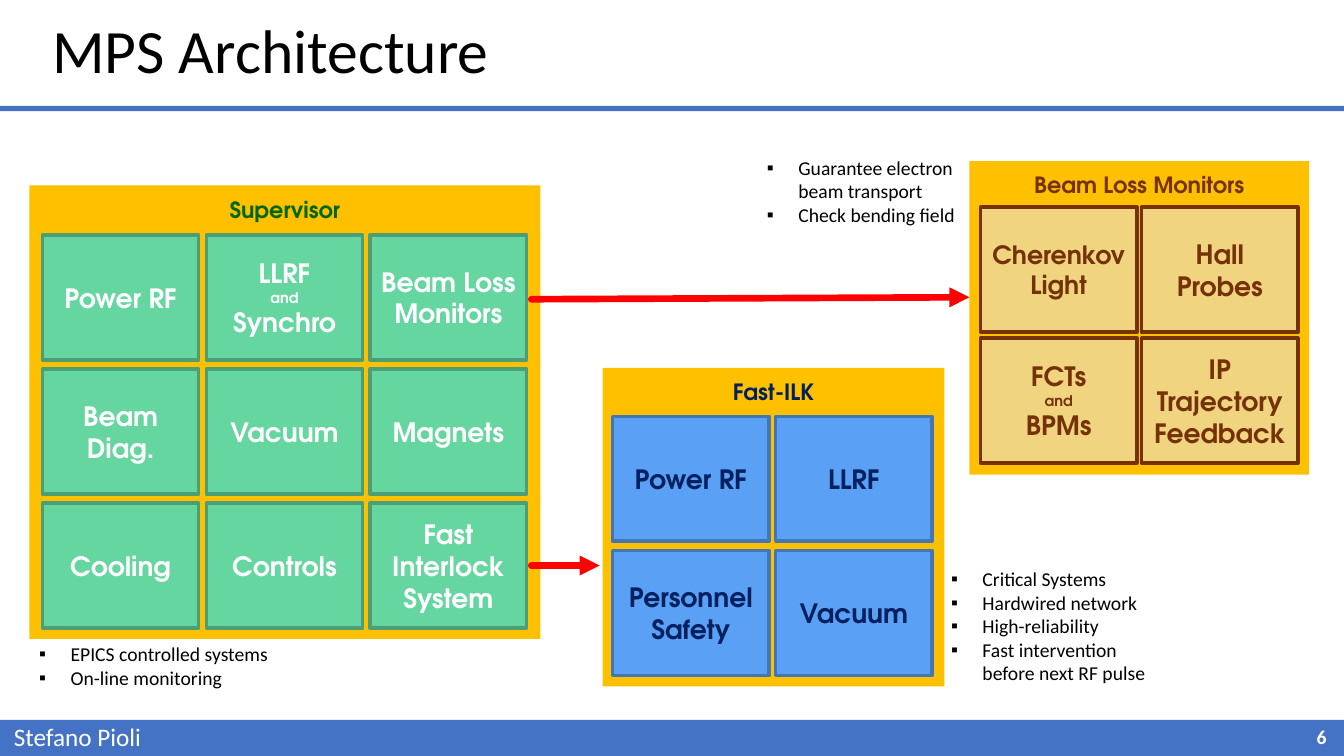
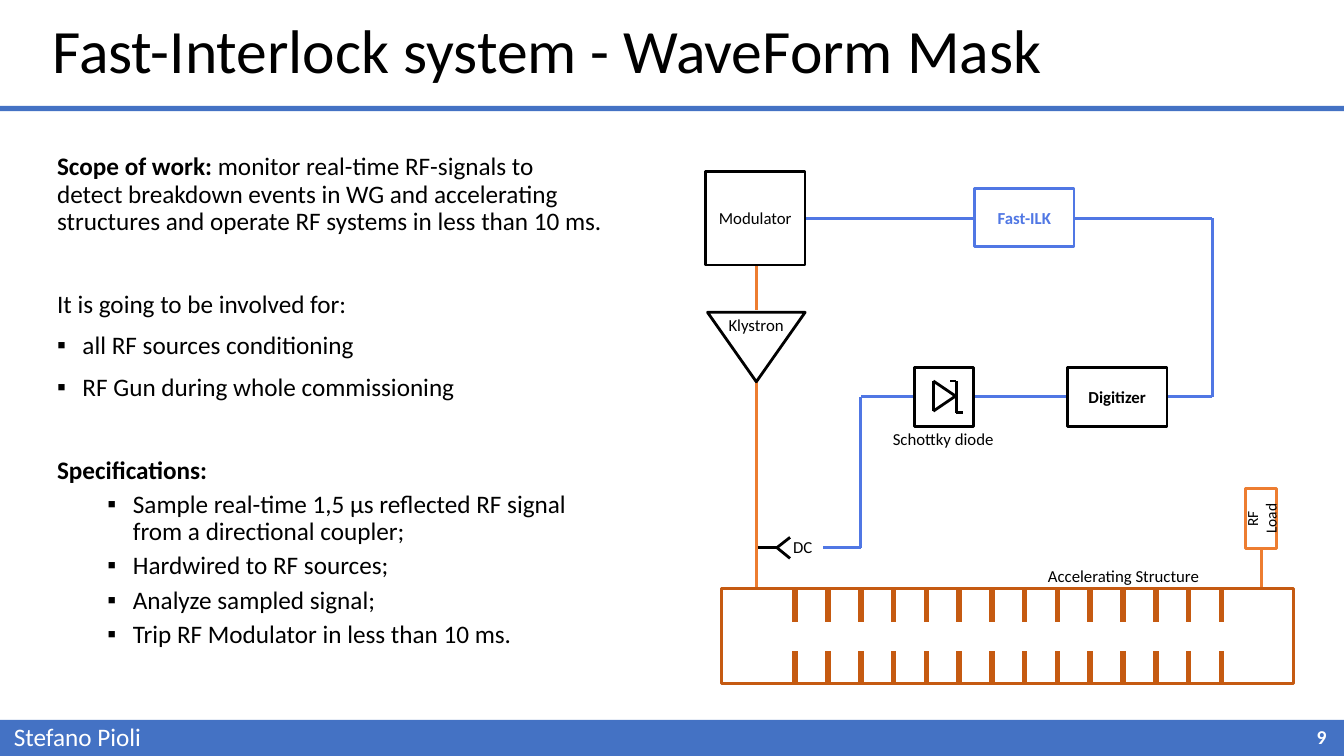
from itertools import pairwise

from lxml import etree
from pptx import Presentation
from pptx import util as u
from pptx.dml.color import RGBColor
from pptx.enum import shapes, text
from pptx.oxml.ns import qn

COLORS = {
    "black": "000000", "white": "FFFFFF", "band": "4472C4", "panel": "FFC000",
    "green": "65D6A0", "green edge": "4B9E76", "green title": "006600",
    "blue": "5AA0F5", "blue edge": "4376B5", "navy": "002060",
    "sand": "F0D47F", "brown": "753209", "arrow": "FF0000",
    "signal": "5077E4", "waveguide": "ED7D31", "structure": "C55A11",
}
BODY_FONT = "Calibri"
BLOCK_FONT = "TeX Gyre Adventor"
LEFT, CENTER, RIGHT = text.PP_ALIGN.LEFT, text.PP_ALIGN.CENTER, text.PP_ALIGN.RIGHT
TOP, MIDDLE = text.MSO_ANCHOR.TOP, text.MSO_ANCHOR.MIDDLE
RECTANGLE = shapes.MSO_SHAPE.RECTANGLE
TRIANGLE = shapes.MSO_SHAPE.ISOSCELES_TRIANGLE
LINE_SIZES = {"and": 10.5, "Cherenkov": 18, "Light": 18}


def add_box(slide, at, lines=(), size=12, color="black", bold=False, font=BODY_FONT,
            align=LEFT, anchor=MIDDLE, kind=None, fill=None, edge=None, width=2):
    place = [u.Cm(length) for length in at]
    if kind is None:
        shape = slide.shapes.add_textbox(*place)
    else:
        shape = slide.shapes.add_shape(kind, *place)
        shape.shadow.inherit = False
        if fill:
            shape.fill.solid()
            shape.fill.fore_color.rgb = RGBColor.from_string(COLORS[fill])
        else:
            shape.fill.background()
        if edge:
            shape.line.color.rgb = RGBColor.from_string(COLORS[edge])
            shape.line.width = u.Pt(width)
        else:
            shape.line.fill.background()
    frame = shape.text_frame
    frame.word_wrap = True
    frame.vertical_anchor = anchor
    for index, line in enumerate(lines):
        paragraph = frame.add_paragraph() if index else frame.paragraphs[0]
        paragraph.add_run().text = line
        paragraph.alignment = align
        paragraph.font.name = font
        paragraph.font.size = u.Pt(LINE_SIZES.get(line, size))
        paragraph.font.bold = bold
        paragraph.font.color.rgb = RGBColor.from_string(COLORS[color])
    return shape


def add_path(slide, points, color, width=2):
    for start, end in pairwise(points):
        line = slide.shapes.add_connector(
            shapes.MSO_CONNECTOR.STRAIGHT, *[u.Cm(value) for value in (*start, *end)])
        line.line.color.rgb = RGBColor.from_string(COLORS[color])
        line.line.width = u.Pt(width)
        etree.SubElement(line._element.spPr, qn("a:effectLst"))
    return line


presentation = Presentation()
presentation.slide_width, presentation.slide_height = u.Cm(33.87), u.Cm(19.05)
slides = []
for title, number in [("MPS Architecture", "6"),
                      ("Fast-Interlock system - WaveForm Mask", "9")]:
    slide = presentation.slides.add_slide(presentation.slide_layouts[6])
    heading = add_box(slide, (1.07, 0.1, 32, 2.51), [title], 44)
    heading.text_frame.paragraphs[0].line_spacing = 0.9
    for top, height in [(18.14, 0.91), (2.67, 0.13)]:
        add_box(slide, (0, top, 33.87, height), kind=RECTANGLE, fill="band")
    add_box(slide, (0.1, 18.06, 4, 1.02), ["Stefano Pioli"], 18, "white")
    add_box(slide, (31.88, 18.06, 1.8, 1.02), [number], 14, "white", True, align=RIGHT)
    slides.append(slide)
architecture, interlock = slides
bulleted = []

panels = [
    ("Supervisor", "green title", (0.74, 4.67, 12.88, 11.43), (1.07, 5.92), (4.13, 3.38),
     ("green", "green edge", "white"),
     [["Power RF", "LLRF\nand\nSynchro", "Beam Loss Monitors"],
      ["Beam\nDiag.", "Vacuum", "Magnets"],
      ["Cooling", "Controls", "Fast\nInterlock\nSystem"]]),
    ("Fast-ILK", "navy", (15.19, 9.27, 8.61, 8.03), (15.44, 10.49), (4.11, 3.38),
     ("blue", "blue edge", "navy"),
     [["Power RF", "LLRF"], ["Personnel\nSafety", "Vacuum"]]),
    ("Beam Loss Monitors", "brown", (24.43, 4.06, 8.56, 7.9), (24.71, 5.22), (4.06, 3.3),
     ("sand", "brown", "brown"),
     [["Cherenkov\nLight", "Hall Probes"],
      ["FCTs\nand\nBPMs", "IP Trajectory Feedback"]]),
]
for title, title_color, area, origin, pitch, (fill, edge, ink), rows in panels:
    left, top, width, height = area
    add_box(architecture, area, kind=RECTANGLE, fill="panel")
    add_box(architecture, (left, top + 0.13, width, 0.94), [title], 16, title_color,
            True, BLOCK_FONT, CENTER)
    for row, names in enumerate(rows):
        for column, name in enumerate(names):
            cell = (origin[0] + column * pitch[0], origin[1] + row * pitch[1], 3.94, 3.15)
            add_box(architecture, cell, name.split("\n"), 19, ink, True, BLOCK_FONT,
                    CENTER, kind=RECTANGLE, fill=fill, edge=edge, width=2.5)

for points in [[(13.39, 7.54), (24.43, 7.49)], [(13.39, 14.25), (15.11, 14.25)]]:
    arrow = add_path(architecture, points, "arrow", 4.75)
    outline = arrow.line._get_or_add_ln()
    outline.set("cap", "rnd")
    etree.SubElement(outline, qn("a:tailEnd"), type="triangle")

for at, lines in [
    ((23.72, 14.15, 5.87, 3.25),
     ["Critical Systems", "Hardwired network", "High-reliability",
      "Fast intervention before next RF pulse"]),
    ((19.08, 3.78, 5.41, 2.06),
     ["Guarantee electron beam transport", "Check bending field"]),
    ((0.74, 16.05, 7.21, 1.44), ["EPICS controlled systems", "On-line monitoring"]),
]:
    note = add_box(architecture, at, lines, 14)
    bulleted += [(paragraph, 0.79, 0.79) for paragraph in note.text_frame.paragraphs]

body_lines = [
    ("Scope of work: ", 10, None),
    ("It is going to be involved for:", 40, None),
    ("all RF sources conditioning", 10, 0.64),
    ("RF Gun during whole commissioning", 10, 0.64),
    ("Specifications:", 40, None),
    ("Sample real-time 1,5 µs reflected RF signal from a directional coupler;", 5, 1.91),
    ("Hardwired to RF sources;", 5, 1.91),
    ("Analyze sampled signal;", 5, 1.91),
    ("Trip RF Modulator in less than 10 ms.", 5, 1.91),
]
body = add_box(interlock, (1.19, 3.76, 14.3, 13.64), [line for line, _, _ in body_lines],
               18, anchor=TOP)
paragraphs = body.text_frame.paragraphs
for paragraph, (_, space, margin) in zip(paragraphs, body_lines):
    paragraph.line_spacing = 0.9
    paragraph.space_before = u.Pt(space)
    if margin:
        bulleted.append((paragraph, margin, 0.64))
paragraphs[0].runs[0].font.bold = True
paragraphs[4].font.bold = True
paragraphs[0].add_run().text = (
    "monitor real-time RF-signals to detect breakdown events in WG and accelerating "
    "structures and operate RF systems in less than 10 ms.")

for paragraph, margin, hang in bulleted:
    properties = paragraph._p.get_or_add_pPr()
    properties.set("marL", str(u.Cm(margin)))
    properties.set("indent", str(-u.Cm(hang)))
    defaults = properties.find(qn("a:defRPr"))
    for tag, key, value in [("a:buFont", "typeface", "Arial"), ("a:buChar", "char", "▪")]:
        bullet = etree.Element(qn(tag))
        bullet.set(key, value)
        defaults.addprevious(bullet)

wires = [
    ("signal", [(20.29, 5.5), (24.56, 5.5)]),
    ("signal", [(27.08, 5.5), (30.55, 5.5), (30.55, 10), (29.41, 10)]),
    ("signal", [(24.56, 10), (26.9, 10)]),
    ("signal", [(23.04, 10), (21.69, 10), (21.69, 13.8), (20.75, 13.8)]),
    ("waveguide", [(19.07, 6.71), (19.07, 7.82)]),
    ("waveguide", [(19.07, 9.6), (19.07, 14.83)]),
    ("waveguide", [(31.79, 13.84), (31.79, 14.83)]),
    ("black", [(19.1, 13.8), (19.58, 13.8), (19.91, 13.54)]),
    ("black", [(19.58, 13.8), (19.91, 14.07)]),
    ("black", [(23.52, 10.36), (23.52, 9.6), (24.08, 9.98), (23.52, 10.36)]),
    ("black", [(24.26, 10.4), (24.1, 10.4), (24.1, 9.6), (23.95, 9.6)]),
]
for color, points in wires:
    add_path(interlock, points, color)

add_box(interlock, (18.19, 14.83, 14.4, 2.39), kind=RECTANGLE, edge="structure")
iris_count = 14
for index in range(iris_count):
    x = 20.04 + index * (30.78 - 20.04) / (iris_count - 1)
    for top, bottom in [(14.86, 15.67), (16.41, 17.25)]:
        add_path(interlock, [(x, top), (x, bottom)], "structure", 4)

for at, lines, ink, bold, edge in [
    ((17.78, 4.32, 2.51, 2.36), ["Modulator"], "black", False, "black"),
    ((24.56, 4.75, 2.51, 1.47), ["Fast-ILK"], "signal", True, "signal"),
    ((26.9, 9.27, 2.51, 1.47), ["Digitizer"], "black", True, "black"),
    ((23.04, 9.27, 1.5, 1.47), [], "black", False, "black"),
]:
    add_box(interlock, at, lines, 12, ink, bold, align=CENTER, kind=RECTANGLE, edge=edge)

klystron = add_box(interlock, (17.83, 7.87, 2.46, 1.75), kind=TRIANGLE, edge="black")
klystron.rotation = 180
load = add_box(interlock, (31.39, 12.32, 0.79, 1.5), ["RF Load"], 11, align=CENTER,
               kind=RECTANGLE, edge="waveguide")
load.text_frame._txBody.bodyPr.set("vert", "vert270")

for left, top, width, label in [
    (18.11, 7.8, 2.2, "Klystron"),
    (26.16, 14.12, 4.75, "Accelerating Structure"),
    (19.74, 13.41, 1.3, "DC"),
    (22.25, 10.67, 3.3, "Schottky diode"),
]:
    add_box(interlock, (left, top, width, 0.76), [label])

presentation.save("out.pptx")
